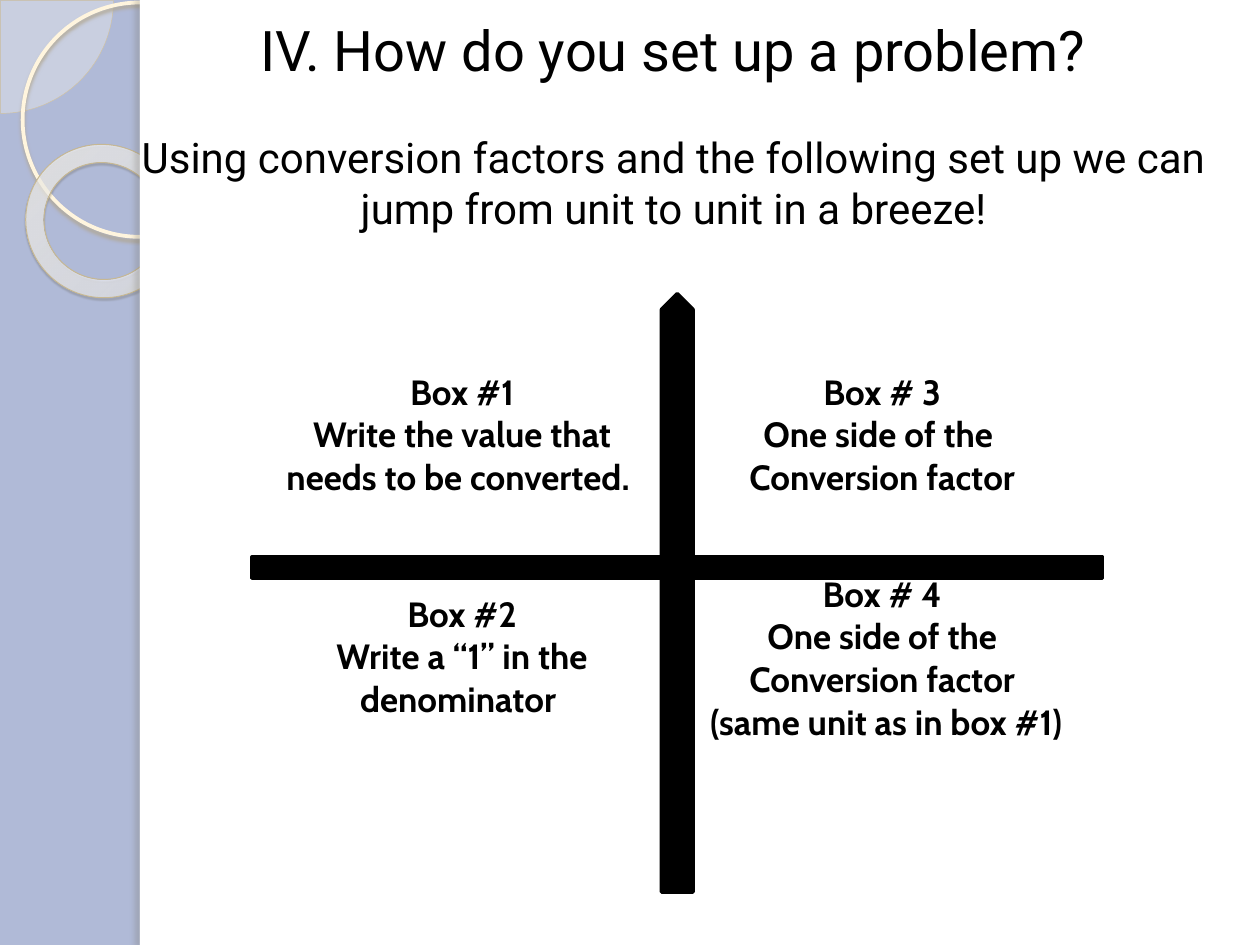
from lxml import etree
from pptx import Presentation
from pptx.dml.color import RGBColor
from pptx.enum.shapes import MSO_SHAPE as Shape
from pptx.enum.text import MSO_ANCHOR as Anchor, PP_ALIGN as Align
from pptx.oxml import parse_xml
from pptx.oxml.ns import nsdecls, qn
from pptx.util import Inches, Pt

BLACK = RGBColor(0x00, 0x00, 0x00)
WHITE = RGBColor(0xFF, 0xFF, 0xFF)
BLUE = RGBColor(0xB0, 0xBA, 0xD7)
CREAM = RGBColor(0xFE, 0xFA, 0xF4)
TAN = RGBColor(0xD3, 0xC3, 0x9F)
RING = RGBColor(0xFF, 0xF5, 0xDE)
DONUT_EDGE = RGBColor(0xC7, 0xB8, 0x93)
RING_SHADOW = RGBColor(0xB0, 0xA6, 0x8F)
DONUT_SHADOW = RGBColor(0x5A, 0x54, 0x44)
PANEL_SHADOW = RGBColor(0x73, 0x6F, 0x63)
# Position, colour and opacity, all in percent
DONUT_STOPS = [
    (0, RGBColor(0xFF, 0xFC, 0xF6), 70),
    (70, RGBColor(0xFF, 0xFE, 0xFB), 55),
    (100, RGBColor(0xF0, 0xD2, 0x8E), 60),
]


def color_xml(color, alpha):
    return f'<a:srgbClr val="{color}"><a:alpha val="{alpha * 1000}"/></a:srgbClr>'


def write(paragraph, text, font="Roboto", size=24, bold=False, before=0):
    paragraph.alignment = Align.CENTER
    paragraph.space_before = Pt(before)
    run = paragraph.add_run()
    run.text = text
    run.font.name, run.font.size, run.font.bold = font, Pt(size), bold
    run.font.color.rgb = BLACK


def paragraphs(frame, count):
    return [frame.paragraphs[0]] + [frame.add_paragraph() for _ in range(count - 1)]


class SlideBuilder:
    border_width = Pt(2.25)

    def __init__(self, slide, background):
        self.slide = slide
        slide.background.fill.solid()
        slide.background.fill.fore_color.rgb = background

    def shape(self, kind, box, fill=None, alpha=None, line=None, width=1,
              rotation=0, adjust=(), shadow=None):
        item = self.slide.shapes.add_shape(kind, *map(Inches, box))
        item.rotation = rotation
        item.shadow.inherit = False
        for index, value in enumerate(adjust):
            item.adjustments[index] = value
        if fill is None:
            item.fill.background()
        else:
            item.fill.solid()
            item.fill.fore_color.rgb = fill
        if alpha is not None:
            color = item.fill._xPr.find(qn("a:solidFill"))[0]
            etree.SubElement(color, qn("a:alpha"), val=str(alpha * 1000))
        if line is None:
            item.line.fill.background()
        else:
            item.line.color.rgb = line
            item.line.width = Pt(width)
        if shadow:
            self.cast_shadow(item, *shadow)
        return item

    def cast_shadow(self, item, color, alpha, blur, distance, angle):
        effects = item._element.spPr.find(qn("a:effectLst"))
        effects.append(parse_xml(
            f'<a:outerShdw {nsdecls("a")} blurRad="{Pt(blur)}" dist="{Pt(distance)}" '
            f'dir="{angle * 60000}" algn="tl" rotWithShape="0">'
            f'{color_xml(color, alpha)}</a:outerShdw>'))

    def radial_fill(self, item, stops, left, top, right, bottom):
        stops_xml = "".join(f'<a:gs pos="{pos * 1000}">{color_xml(color, alpha)}</a:gs>'
                            for pos, color, alpha in stops)
        gradient = parse_xml(
            f'<a:gradFill {nsdecls("a")} rotWithShape="1"><a:gsLst>{stops_xml}</a:gsLst>'
            f'<a:path path="circle"><a:fillToRect l="{left * 1000}" t="{top * 1000}" '
            f'r="{right * 1000}" b="{bottom * 1000}"/></a:path></a:gradFill>')
        properties = item._element.spPr
        properties.replace(properties.find(qn("a:noFill")), gradient)

    def text(self, box, lines):
        frame = self.slide.shapes.add_textbox(*map(Inches, box)).text_frame
        frame.word_wrap = True
        frame.vertical_anchor = Anchor.MIDDLE
        for paragraph, (text, style) in zip(paragraphs(frame, len(lines)), lines):
            write(paragraph, text, **style)

    def table(self, box, rows, heights, bottom_margins):
        """Draw a grid whose cells are ruled only along their shared edges."""
        holder = self.slide.shapes.add_table(len(rows), len(rows[0]), *map(Inches, box))
        grid = holder.table
        grid.first_row = grid.horz_banding = False
        for r, row in enumerate(rows):
            grid.rows[r].height = Inches(heights[r])
            for c, lines in enumerate(row):
                cell = grid.cell(r, c)
                cell.vertical_anchor = Anchor.MIDDLE
                cell.margin_bottom = Inches(bottom_margins[r])
                cell.fill.solid()
                cell.fill.fore_color.rgb = WHITE
                for paragraph, line in zip(paragraphs(cell.text_frame, len(lines)), lines):
                    write(paragraph, line, font="Cabin", size=20, bold=True)
                self.rule(cell, L=c > 0, R=c < len(row) - 1, T=r > 0, B=r < len(rows) - 1)
        holder.height = Inches(box[3])

    def rule(self, cell, **sides):
        properties = cell._tc.get_or_add_tcPr()
        for index, (side, ruled) in enumerate(sides.items()):
            paint = (f'<a:solidFill><a:srgbClr val="{BLACK}"/></a:solidFill>'
                     if ruled else "<a:noFill/>")
            properties.insert(index, parse_xml(
                f'<a:ln{side} {nsdecls("a")} w="{self.border_width}">{paint}</a:ln{side}>'))


def main():
    deck = Presentation()
    deck.slide_width, deck.slide_height = Inches(10), Inches(7.5)
    page = SlideBuilder(deck.slides.add_slide(deck.slide_layouts[6]), BLUE)

    # Decorated side band
    page.shape(Shape.PIE, (-0.89, -0.89, 1.79, 1.79), fill=CREAM, alpha=33,
               line=TAN, width=0.25, adjust=(0, 54))
    page.shape(Shape.OVAL, (0.18, 0.02, 1.86, 1.86), line=RING, width=2.15,
               shadow=(RING_SHADOW, 85, 2, 2, 90))
    donut = page.shape(Shape.DONUT, (0.2, 1.15, 1.23, 1.21), line=DONUT_EDGE, width=0.58,
                       rotation=38.6, adjust=(0.12,), shadow=(DONUT_SHADOW, 35, 1, 1.2, 75))
    page.radial_fill(donut, DONUT_STOPS, -408, -50, 508, 150)

    # White content panel and its shaded edge
    page.shape(Shape.RECTANGLE, (1.11, 0, 8.89, 7.5), fill=WHITE)
    page.shape(Shape.RECTANGLE, (1.11, 0, 0.08, 7.5), fill=WHITE,
               shadow=(PANEL_SHADOW, 25, 3, 3, 180))

    # Heading
    page.text((0.92, 0.3, 8.85, 1.37), [
        ("IV. How do you set up a problem?", dict(size=32)),
        ("Using conversion factors and the following set up we can jump from "
         "unit to unit in a breeze!", dict(before=28)),
    ])

    # Four conversion boxes
    page.table((2, 2.75, 6.67, 3.85), [
        [["Box #1", "Write the value that needs to be converted. "],
         ["Box # 3", "One side of the ", "Conversion factor"]],
        [["Box #2", "Write a “1” in the denominator "],
         ["Box # 4", "One side of the Conversion factor", " (same unit as in box #1)"]],
    ], heights=(1.75, 0.41), bottom_margins=(0.39, 0.05))

    # Cross between the boxes
    page.shape(Shape.PENTAGON, (3, 4.58, 4.75, 0.25), fill=BLACK, line=BLACK, width=2,
               rotation=270)
    page.shape(Shape.RECTANGLE, (2, 4.42, 6.75, 0.17), fill=BLACK, line=BLACK, width=2)

    deck.save("out.pptx")


if __name__ == "__main__":
    main()
